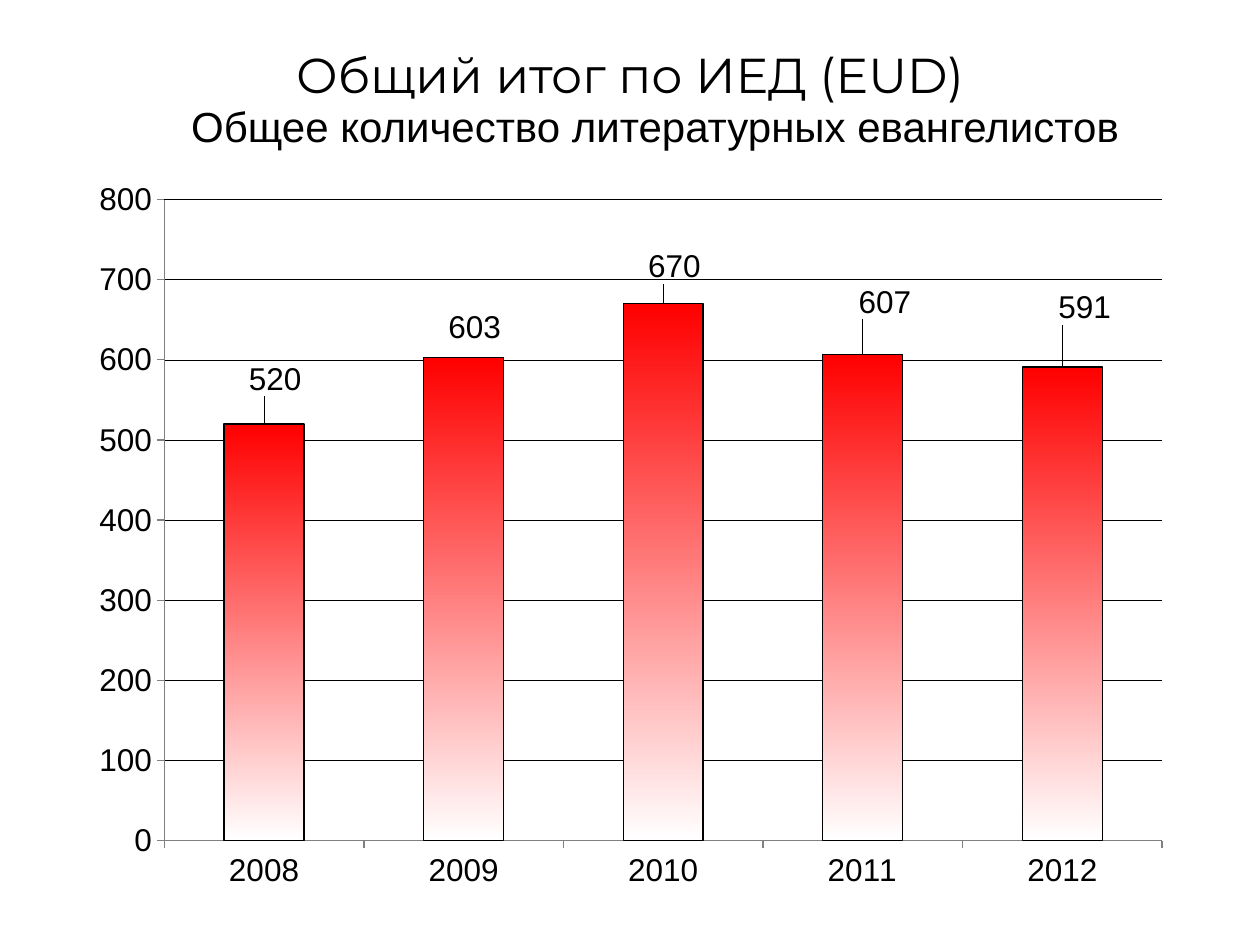
from lxml import etree
from pptx import Presentation
from pptx.chart.data import CategoryChartData
from pptx.dml.color import RGBColor
from pptx.enum.chart import XL_CHART_TYPE, XL_LABEL_POSITION, XL_TICK_MARK
from pptx.enum.text import MSO_ANCHOR, PP_ALIGN
from pptx.oxml.ns import qn
from pptx.util import Inches, Pt

COLUMN = XL_CHART_TYPE.COLUMN_CLUSTERED
OUTSIDE_END = XL_LABEL_POSITION.OUTSIDE_END
TICK_OUT, TICK_NONE = XL_TICK_MARK.OUTSIDE, XL_TICK_MARK.NONE
CENTER, TOP = PP_ALIGN.CENTER, MSO_ANCHOR.TOP

EVANGELISTS = {"2008": 520, "2009": 603, "2010": 670, "2011": 607, "2012": 591}
LABEL_SHIFTS = [(0.01, -0.03), (0.01, -0.01), (0.01, -0.02), (0.02, -0.04), (0.02, -0.05)]
PLOT_AREA = {"x": 0.08, "y": 0.04, "w": 0.9, "h": 0.87}
BLACK, GRAY, RED, WHITE = "000000", "808080", "FF0000", "FFFFFF"


def color(value):
    """Turn a hex string into a colour."""
    return RGBColor.from_string(value)


def assign(target, formats):
    """Set every attribute named in a dict of format values."""
    for name, value in formats.items():
        setattr(target, name, value)


def stroke(line, value, width):
    """Give a line its colour and width in points."""
    line.color.rgb = color(value)
    line.width = Pt(width)


def manual_layout(position, modes=()):
    """Make a chart layout element from shares of the chart's size."""
    layout = etree.Element(qn("c:layout"))
    manual = etree.SubElement(layout, qn("c:manualLayout"))
    for name, value in [*modes, *position.items()]:
        etree.SubElement(manual, qn(f"c:{name}"), val=str(value))
    return layout


class StatisticsSlide:
    """Hold the style and the current slide."""

    def __init__(self, presentation):
        """Add a blank slide to the presentation."""
        self.size = presentation.slide_width, presentation.slide_height
        self.slide = presentation.slides.add_slide(presentation.slide_layouts[6])
        self.body_font = "Arial"
        self.title_font = "Montserrat"

    def place(self, left, top, width, height):
        """Turn shares of the slide into lengths."""
        across, down = self.size
        return int(left * across), int(top * down), int(width * across), int(height * down)

    def heading(self, words, area, font, size):
        """Add a centred line of text."""
        frame = self.slide.shapes.add_textbox(*self.place(*area)).text_frame
        assign(frame, {"word_wrap": True, "vertical_anchor": TOP, "text": words})
        paragraph = frame.paragraphs[0]
        paragraph.alignment = CENTER
        assign(paragraph.runs[0].font, {"name": font, "size": Pt(size)})
        paragraph.runs[0].font.color.rgb = color(BLACK)

    def columns(self, counts, shifts, area):
        """Add a column chart with gradient bars and shifted value labels."""
        data = CategoryChartData()
        data.categories = list(counts)
        data.add_series("Series 1", list(counts.values()))
        chart = self.slide.shapes.add_chart(COLUMN, *self.place(*area), data).chart
        assign(chart, {"has_legend": False, "has_title": False})
        assign(chart.font, {"name": self.body_font, "size": Pt(18)})
        chart.font.color.rgb = color(BLACK)
        self.axes(chart)
        plot = chart.plots[0]
        assign(plot, {"gap_width": 150, "vary_by_categories": False})
        self.bars(plot.series[0])
        self.value_labels(plot.series[0], shifts)
        plot_area = chart.element.find(".//" + qn("c:plotArea"))
        for default in plot_area.findall(qn("c:layout")):
            plot_area.remove(default)
        modes = [("layoutTarget", "inner"), ("xMode", "edge"), ("yMode", "edge")]
        plot_area.insert(0, manual_layout(PLOT_AREA, modes))

    def axes(self, chart):
        """Format both axes and the gridlines."""
        for axis in (chart.category_axis, chart.value_axis):
            assign(axis, {"major_tick_mark": TICK_OUT, "minor_tick_mark": TICK_NONE})
            stroke(axis.format.line, GRAY, 0.75)
        scale = {"minimum_scale": 0, "maximum_scale": 800, "major_unit": 100}
        assign(chart.value_axis, {**scale, "has_major_gridlines": True})
        stroke(chart.value_axis.major_gridlines.format.line, BLACK, 0.25)

    def bars(self, series):
        """Fill the bars from red down to white."""
        fill = series.format.fill
        fill.gradient()
        fill.gradient_angle = 270
        for stop, shade in zip(fill.gradient_stops, (RED, WHITE)):
            stop.color.rgb = color(shade)
        stroke(series.format.line, BLACK, 0.75)

    def value_labels(self, series, shifts):
        """Show the values, each moved by a share of the chart's size."""
        assign(series.data_labels, {"show_value": True, "position": OUTSIDE_END})
        for index in range(len(shifts)):
            series.points[index].data_label.position = OUTSIDE_END
        labels = series.data_labels._element.findall(qn("c:dLbl"))
        for label, (across, down) in zip(labels, shifts):
            label.insert(1, manual_layout({"x": across, "y": down}))


def main():
    """Build the slide and save it."""
    presentation = Presentation()
    assign(presentation, {"slide_width": Inches(10), "slide_height": Inches(7.5)})
    page = StatisticsSlide(presentation)
    page.columns(EVANGELISTS, LABEL_SHIFTS, (0.06, 0.18, 0.88, 0.78))
    page.heading("Общий итог по ИЕД (EUD)", (0.05, 0.04, 0.9, 0.17), page.title_font, 28)
    page.heading("Общее количество литературных евангелистов",
                 (0.125, 0.1, 0.79, 0.07), page.body_font, 24)
    presentation.save("out.pptx")


if __name__ == "__main__":
    main()
